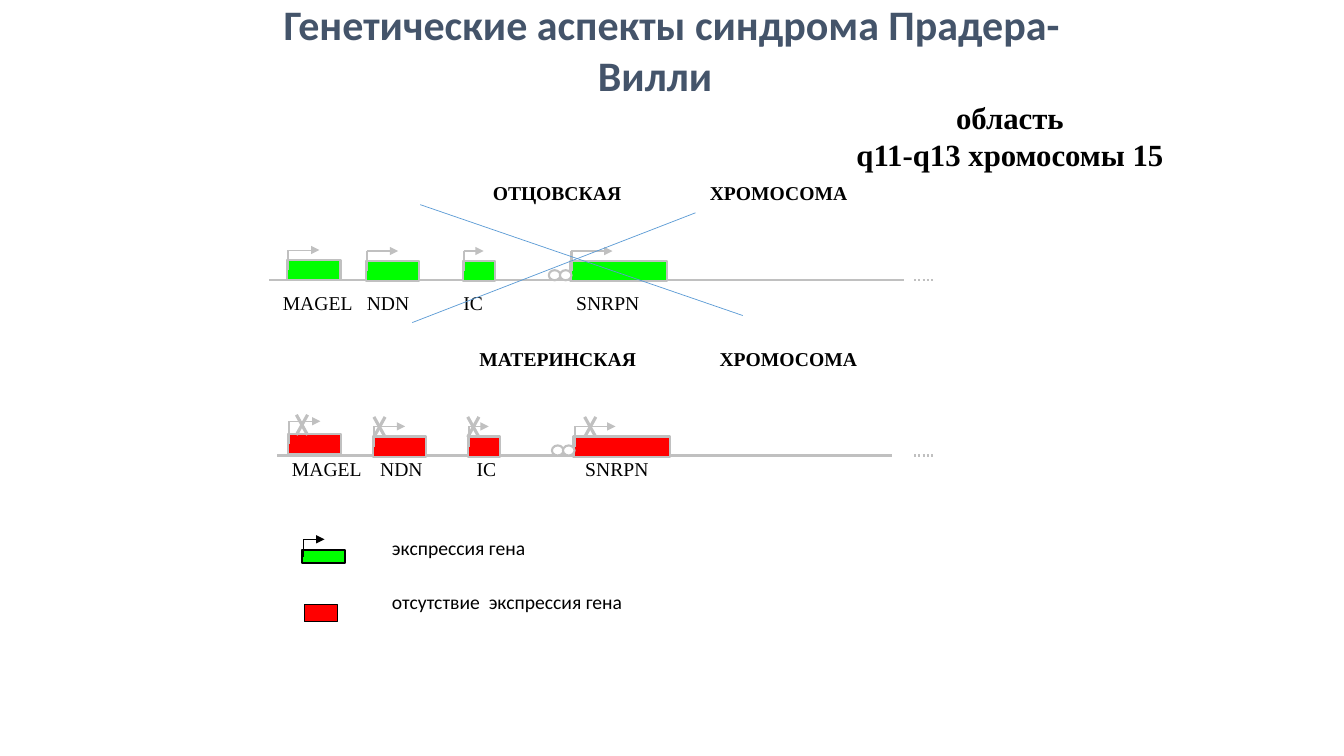
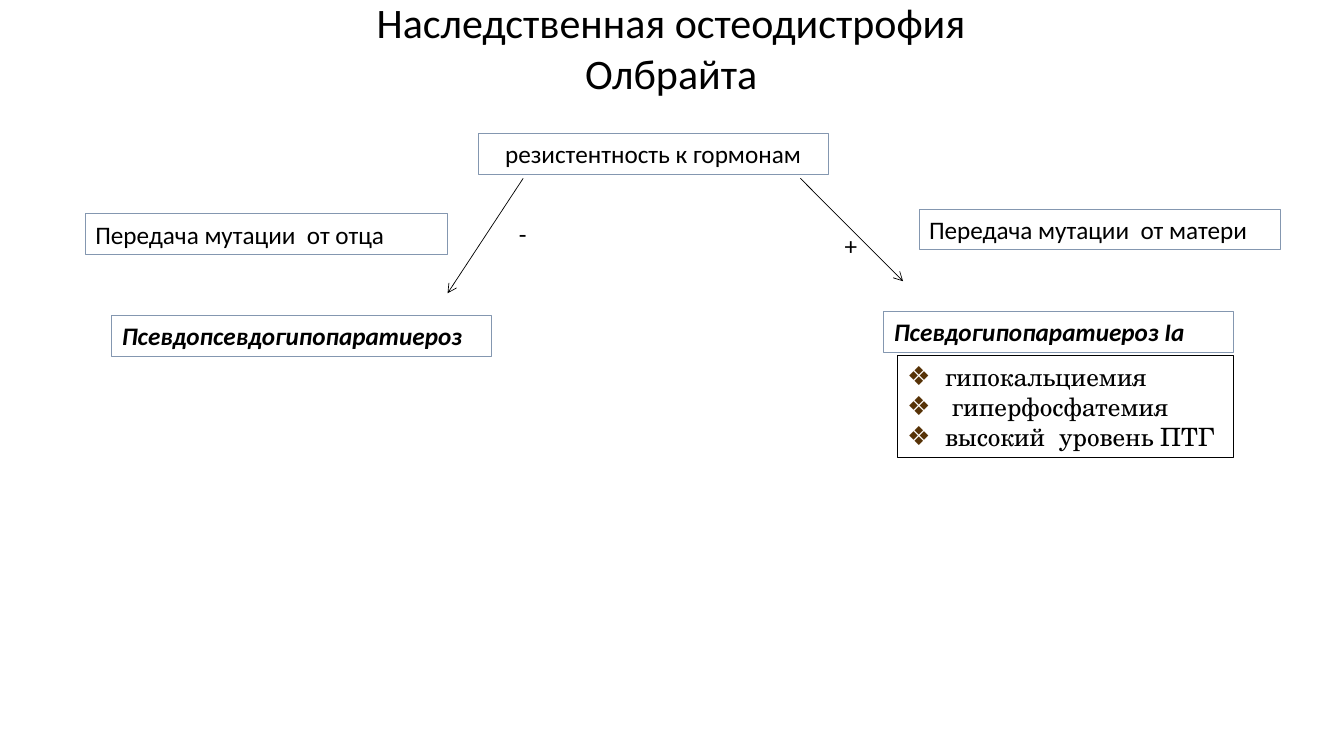
import lxml.etree
import pptx
import pptx.dml.color
import pptx.enum.dml
import pptx.enum.shapes
import pptx.enum.text
import pptx.oxml.ns
import pptx.util

Pt = pptx.util.Pt
qn = pptx.oxml.ns.qn
ALIGN = pptx.enum.text.PP_ALIGN
SHAPES = pptx.enum.shapes.MSO_SHAPE

BLACK, WHITE, GREY = "000000", "FFFFFF", "C0C0C0"
GREEN, RED, STRIKE_BLUE = "00FF00", "FF0000", "5B9BD5"
SLATE, FRAME_BLUE, BULLET_BROWN = "44546A", "8497B0", "563206"
SERIF, SANS, SCHOOL = "Times New Roman", "Calibri", "TeX Gyre Schola"

BAR_HEIGHT = 14.4
GENE_SIZES = {"MAGEL": (38, 23), "NDN": (38, 23), "IC": (23, 15), "SNRPN": (69, 30)}
PATERNAL = {
    "fill": GREEN, "axis": (192.2, 645.8, 200.2), "label_top": 208,
    "heading": (("ОТЦОВСКАЯ", 352), ("ХРОМОСОМА", 507)), "heading_top": 129.5,
    "genes": (
        ("MAGEL", 205.2, 185.8, 7.2, 202, None),
        ("NDN", 261.4, 186.5, 7.2, 262, None),
        ("IC", 330.5, 186.5, 7.2, 331, None),
        ("SNRPN", 407.5, 186.5, 7.2, 411.5, None),
    ),
}
MATERNAL = {
    "fill": RED, "axis": (198, 637.2, 325.4), "label_top": 326,
    "heading": (("МАТЕРИНСКАЯ", 342.5), ("ХРОМОСОМА", 514)), "heading_top": 247.5,
    "genes": (
        ("MAGEL", 205.9, 310.3, 9.4, 208.5, 211.7),
        ("NDN", 266.4, 311.8, 7.2, 271.5, 267.1),
        ("IC", 334.1, 311.8, 7.2, 340.5, 334.1),
        ("SNRPN", 409.7, 311.8, 7.2, 418, 417.6),
    ),
}


def colour(code):
    return pptx.dml.color.RGBColor.from_string(code)


def place(box, left, top, width, height):
    frame = {"left": left, "top": top, "width": width, "height": height}
    for name, value in frame.items():
        setattr(box, name, Pt(value))


def outline(shape, code, weight):
    shape.line.color.rgb = colour(code)
    shape.line.width = Pt(weight)


def add_span(para, text, code=BLACK, **formats):
    span = para.add_run()
    span.text = text
    span.font.color.rgb = colour(code)
    for name, value in formats.items():
        setattr(span.font, name, value)


def write(box, lines, align=ALIGN.LEFT, wrap=True, inset=None, **formats):
    frame = box.text_frame
    settings = {
        "word_wrap": wrap,
        "auto_size": pptx.enum.text.MSO_AUTO_SIZE.NONE,
        "vertical_anchor": pptx.enum.text.MSO_ANCHOR.TOP,
    }
    if inset is not None:
        for side in ("left", "top", "right", "bottom"):
            settings["margin_" + side] = Pt(inset)
    for name, value in settings.items():
        setattr(frame, name, value)
    for index, line in enumerate(lines):
        para = frame.paragraphs[0] if index == 0 else frame.add_paragraph()
        para.alignment = align
        para.space_before = Pt(0)
        add_span(para, line, **formats)


def add_title(page, text, area, first_indent=0, **formats):
    title = page.shapes.title
    place(title, *area)
    write(title, [text], ALIGN.CENTER, name=SANS, size=Pt(30), **formats)
    title.text_frame.paragraphs[0]._p.get_or_add_pPr().set("indent", str(Pt(first_indent)))


def add_text(page, lines, area, **formats):
    box = page.shapes.add_textbox(*map(Pt, area))
    write(box, lines, **formats)


def add_label(page, text, left, top, width=200, name=SERIF, bold=False):
    add_text(page, [text], (left, top, width, 18), wrap=False, inset=0,
             name=name, size=Pt(14), bold=bold)


def add_figure(page, kind, area, fill, edge, weight):
    shape = page.shapes.add_shape(kind, *map(Pt, area))
    shape.shadow.inherit = False
    outline(shape, edge, weight)
    if fill is None:
        shape.fill.background()
    else:
        shape.fill.solid()
        shape.fill.fore_color.rgb = colour(fill)
    return shape


def add_line(page, start, end, code, weight, head=None, dash=None):
    kind = pptx.enum.shapes.MSO_CONNECTOR.STRAIGHT
    line = page.shapes.add_connector(kind, *map(Pt, (*start, *end)))
    outline(line, code, weight)
    if dash:
        line.line.dash_style = dash
    if head:
        lxml.etree.SubElement(line.line._get_or_add_ln(), qn("a:tailEnd"), type=head)
    lxml.etree.SubElement(line._element.spPr, qn("a:effectLst"))


def add_cross(page, left, top, width, height):
    right, bottom = left + width, top + height
    add_line(page, (left, top), (right, bottom), GREY, 2.25)
    add_line(page, (right, top), (left, bottom), GREY, 2.25)


def add_gene(page, area, fill, edge, lift, reach, stem_weight):
    left, top, width, height = area
    flag = top - lift
    add_figure(page, SHAPES.RECTANGLE, area, fill, edge, 1.5)
    add_line(page, (left + 0.7, top + height / 2), (left + 0.7, flag), edge, stem_weight)
    add_line(page, (left + 0.7, flag), (left + reach, flag), edge, 0.75, "triangle")


def add_chromosome(page, chromosome):
    for text, left in chromosome["heading"]:
        add_label(page, text, left, chromosome["heading_top"], bold=True)
    start, end, level = chromosome["axis"]
    add_line(page, (start, level), (end, level), GREY, 1.5)
    add_line(page, (653, level), (668, level), GREY, 1.5,
             dash=pptx.enum.dml.MSO_LINE.ROUND_DOT)
    for name, left, top, lift, label_left, cross_left in chromosome["genes"]:
        width, reach = GENE_SIZES[name]
        add_gene(page, (left, top, width, BAR_HEIGHT), chromosome["fill"],
                 GREY, lift, reach, 1.5)
        add_label(page, name, label_left, chromosome["label_top"], 60)
        if cross_left is not None:
            add_cross(page, cross_left, top - 14, 8, BAR_HEIGHT)
        if name == "SNRPN":
            for offset in (15.5, 7.6):
                ring = (left - offset, level - 7.2, 8.3, 7.2)
                add_figure(page, SHAPES.OVAL, ring, WHITE, GREY, 1.5)


def add_legend(page):
    add_gene(page, (216, 393.1, 30.2, 9.4), GREEN, BLACK, 7.9, 15.8, 0.75)
    add_figure(page, SHAPES.RECTANGLE, (217.4, 432, 23.8, 12.2), RED, BLACK, 0.75)
    add_label(page, "экспрессия гена", 280, 382.5, name=SANS)
    add_label(page, "отсутствие  экспрессия гена", 280, 421, name=SANS)


def add_framed(page, text, left, top, width, align=ALIGN.LEFT, strong=False):
    box = add_figure(page, SHAPES.RECTANGLE, (left, top, width, 29), None, FRAME_BLUE, 0.75)
    write(box, [text], align, name=SANS, size=Pt(18), bold=strong, italic=strong)


def add_bullet(para):
    properties = para._p.get_or_add_pPr()
    properties.set("marL", str(Pt(27)))
    properties.set("indent", str(Pt(-27)))
    tint = lxml.etree.SubElement(properties, qn("a:buClr"))
    lxml.etree.SubElement(tint, qn("a:srgbClr"), val=BULLET_BROWN)
    lxml.etree.SubElement(properties, qn("a:buSzPct"), val="104000")
    lxml.etree.SubElement(properties, qn("a:buChar"), char="❖")


def add_list(page, lines, area):
    body = page.placeholders[1]
    place(body, *area)
    outline(body, BLACK, 0.75)
    write(body, lines, name=SCHOOL, size=Pt(18))
    for para in body.text_frame.paragraphs:
        add_bullet(para)


def build_genetics(deck):
    page = deck.slides.add_slide(deck.slide_layouts[5])
    add_title(page, "Генетические аспекты синдрома Прадера-Вилли",
              (144, -4.4, 648, 80), 24, code=SLATE, bold=True)
    add_text(page, ["область", "q11-q13 хромосомы 15"], (577.4, 67, 288, 60.5),
             align=ALIGN.CENTER, name=SERIF, size=Pt(22), bold=True)
    for chromosome in (PATERNAL, MATERNAL):
        add_chromosome(page, chromosome)
    add_legend(page)
    add_line(page, (496.8, 152), (294.5, 230.4), STRIKE_BLUE, 0.5)
    add_line(page, (300.2, 146.2), (530.6, 225.4), STRIKE_BLUE, 0.5)


def build_osteodystrophy(deck):
    page = deck.slides.add_slide(deck.slide_layouts[1])
    add_title(page, "Наследственная остеодистрофия Олбрайта", (230.4, -5.8, 498.2, 80))
    add_framed(page, "резистентность к гормонам", 341.5, 95.5, 250, ALIGN.CENTER)
    add_framed(page, "Передача мутации  от отца", 61, 152.8, 258.5)
    add_framed(page, "Передача мутации  от матери", 656.5, 149.5, 258.5)
    add_framed(page, "Псевдопсевдогипопаратиероз", 80, 225.4, 271, strong=True)
    add_framed(page, "Псевдогипопаратиероз Ia", 631.4, 222.5, 250, strong=True)
    add_line(page, (373.7, 127.4), (319.7, 209.5), BLACK, 0.5, "arrow")
    add_line(page, (571.7, 127.4), (645.1, 200.9), BLACK, 0.5, "arrow")
    for sign, left, top in (("-", 363.6, 152.6), ("+", 596.2, 161.3)):
        add_text(page, [sign], (left, top, 24, 29), wrap=False, name=SANS, size=Pt(18))
    add_list(page, ["гипокальциемия", " гиперфосфатемия", "высокий  уровень ПТГ"],
             (640.8, 254.2, 240.5, 72.7))


def main():
    deck = pptx.Presentation()
    deck.slide_width, deck.slide_height = Pt(960), Pt(540)
    build_genetics(deck)
    build_osteodystrophy(deck)
    deck.save("out.pptx")


if __name__ == "__main__":
    main()
